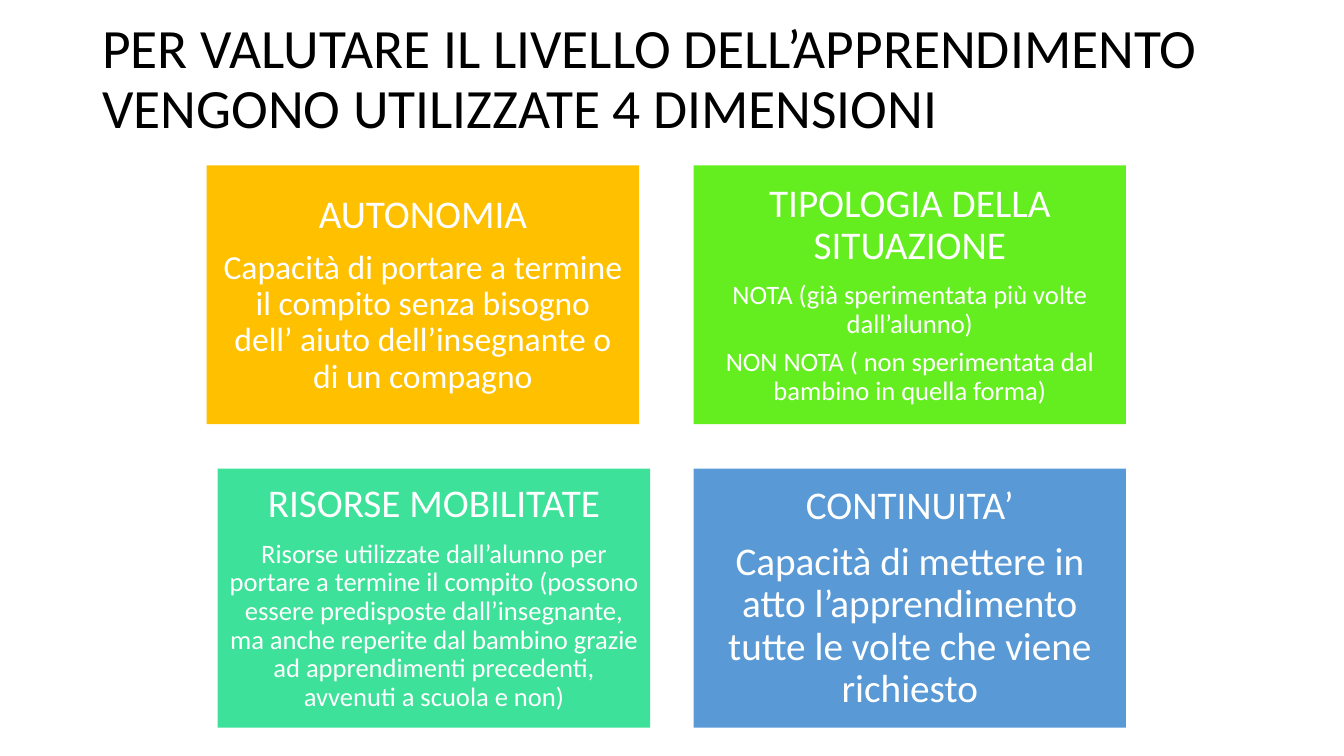
from pptx import Presentation
from pptx.dml.color import RGBColor
from pptx.enum.shapes import MSO_SHAPE as Shape
from pptx.enum.text import MSO_ANCHOR as Anchor, PP_ALIGN as Align
from pptx.util import Pt

BLACK = RGBColor(0x00, 0x00, 0x00)
WHITE = RGBColor(0xFF, 0xFF, 0xFF)
AMBER = RGBColor(0xFF, 0xC0, 0x00)
LIME = RGBColor(0x65, 0xEE, 0x1F)
MINT = RGBColor(0x3D, 0xE1, 0x99)
BLUE = RGBColor(0x59, 0x99, 0xD5)

TITLE = "PER VALUTARE IL LIVELLO DELL’APPRENDIMENTO VENGONO UTILIZZATE 4 DIMENSIONI"
LEFT, RIGHT = 147.6, 495.4
TOP, LOW = 118.1, 334.8
SHIFT = 7.9
CARDS = [
    (LEFT, TOP, AMBER, "AUTONOMIA", 24, [
        "Capacità di portare a termine il compito senza bisogno\v"
        "dell’ aiuto dell’insegnante o di un compagno"]),
    (RIGHT, TOP, LIME, "TIPOLOGIA DELLA SITUAZIONE", 19, [
        "NOTA (già sperimentata più volte dall’alunno)",
        "NON NOTA ( non sperimentata dal bambino in quella forma)"]),
    (LEFT + SHIFT, LOW, MINT, "RISORSE MOBILITATE", 19, [
        "Risorse utilizzate dall’alunno per portare a termine il compito "
        "(possono essere predisposte dall’insegnante, ma anche reperite dal "
        "bambino grazie ad apprendimenti precedenti, avvenuti a scuola e non)"]),
    (RIGHT, LOW, BLUE, "CONTINUITA’", 28, [
        "Capacità di mettere in atto l’apprendimento tutte le volte che "
        "viene richiesto"]),
]


def set_para(para, text, size, color, align, before=0):
    """Fill one paragraph and style it."""
    para.text = text
    para.alignment = align
    para.line_spacing = 0.9
    para.space_before = Pt(before)
    font = para.font
    font.name, font.size, font.color.rgb = "Calibri", Pt(size), color


def add_title(slide):
    """Add the slide heading."""
    frame = slide.shapes.add_textbox(Pt(66), Pt(28.8), Pt(828), Pt(56.9)).text_frame
    frame.word_wrap = True
    frame.vertical_anchor = Anchor.MIDDLE
    set_para(frame.paragraphs[0], TITLE, 39.6, BLACK, Align.LEFT)


def add_card(slide, left, top, color, head, size, body):
    """Add a filled card with a heading and body paragraphs."""
    card = slide.shapes.add_shape(Shape.RECTANGLE, Pt(left), Pt(top), Pt(308.9), Pt(185))
    card.shadow.inherit = False
    card.fill.solid()
    card.fill.fore_color.rgb = color
    card.line.fill.background()
    frame = card.text_frame
    frame.word_wrap = True
    frame.vertical_anchor = Anchor.MIDDLE
    frame.margin_left = frame.margin_right = Pt(8.4)
    frame.margin_top = frame.margin_bottom = Pt(8.4)
    set_para(frame.paragraphs[0], head, 28, WHITE, Align.CENTER)
    before = 9.8
    for text in body:
        set_para(frame.add_paragraph(), text, size, WHITE, Align.CENTER, before)
        before = 6.7


def main():
    """Build the slide and save it."""
    deck = Presentation()
    deck.slide_width, deck.slide_height = Pt(960), Pt(540)
    slide = deck.slides.add_slide(deck.slide_layouts[6])
    add_title(slide)
    for card in CARDS:
        add_card(slide, *card)
    deck.save("out.pptx")


if __name__ == "__main__":
    main()
